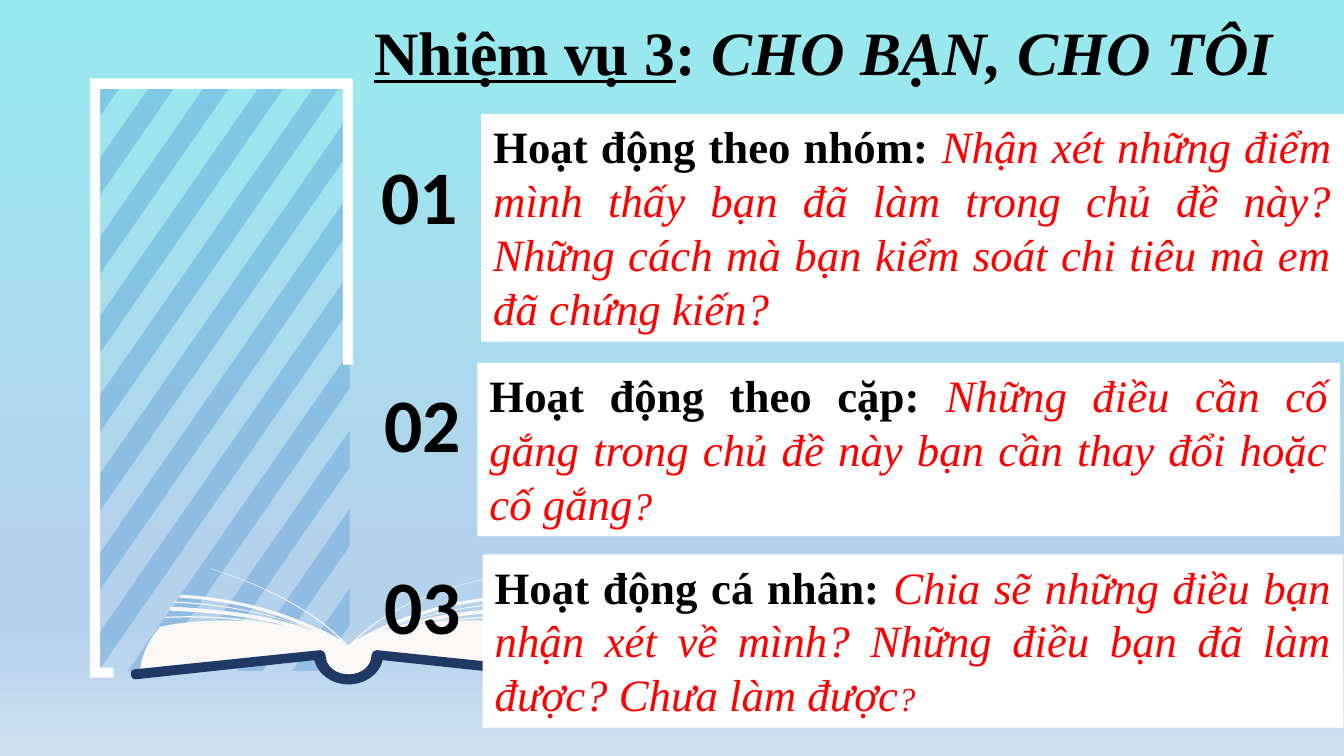
"""Build the classroom task slide with three numbered activities beside an open book."""
from dataclasses import dataclass
from math import atan2, cos, radians, sin

from lxml import etree
from pptx import Presentation
from pptx import util as u
from pptx.dml.color import RGBColor
from pptx.enum import shapes, text
from pptx.oxml.ns import qn


@dataclass(frozen=True)
class Theme:
    white: str = "FFFFFF"
    ink: str = "000000"
    question: str = "FF0000"
    stripe: str = "438CCF"
    paper: str = "F9F8F7"
    cover: str = "203864"
    sky: tuple = ((0, "96EAEE"), (74, "B5D2EC"), (83, "B5D2EC"), (100, "CEE1F2"))
    body_font: str = "Times New Roman"
    number_font: str = "Calibri"
    title_size: int = 44
    number_size: int = 54
    body_size: int = 32


THEME = Theme()
SPINE_X = 249
FRAME = [(64.2, 56), (252, 56), (252, 260.5), (245, 260.5), (245, 63.5),
         (71.5, 63.5), (71.5, 476.8), (81, 476.8), (81, 484), (64.2, 484)]
PAGES = [(249, 463), (220.8, 447.7, 187.8, 443.2, 160.4, 443.2),
         (141.1, 443.2, 124.6, 445.4, 114.5, 447.8), (114.5, 447.8, 100.8, 461.5, 100, 481),
         (229.7, 466.6), (229.7, 475.9, 238.3, 483.5, 249, 483.5)]
COVER = [(249, 488.9), (237.2, 488.9, 226.9, 481.7, 224.6, 471.6), (96.5, 485.3),
         (95, 485.3, 93.6, 483.8, 93.6, 482.4), (93.6, 480.2),
         (93.6, 478.8, 95, 478.1, 96.5, 478.1), (229, 464.4),
         (231.1, 464.4, 232.6, 466.6, 232.6, 468), (232.6, 475.9, 239.8, 481.7, 249, 481.7)]
ACTIVITIES = [
    ("01", (258.3, 103, 82.8), (343.7, 81.4, 616.3, 162.7), "Hoạt động theo nhóm: ",
     "Nhận xét những điểm mình thấy bạn đã làm trong chủ đề này? "
     "Những cách mà bạn kiểm soát chi tiêu mà em đã chứng kiến?", "", 32),
    ("02", (260.8, 265.7, 82.8), (341, 259.2, 616.3, 123.8), "Hoạt động theo cặp: ",
     "Những điều cần cố gắng trong chủ đề này bạn cần thay đổi hoặc cố gắng", "?", 28),
    ("03", (259.6, 396, 85), (344.7, 396, 614.9, 123.8), "Hoạt động cá nhân: ",
     "Chia sẽ những điều bạn nhận xét về mình? "
     "Những điều bạn đã làm được? Chưa làm được", "?", 24),
]


def mirror(commands):
    """Reflect line and curve commands across the spine of the book."""
    return [tuple(value if index % 2 else 2 * SPINE_X - value
                  for index, value in enumerate(command)) for command in commands]


def symmetric(left):
    """Join a left half outline to its reflection, drawn backwards."""
    right = mirror(left)
    back = [after[2:4] + after[:2] + before[-2:] if len(after) == 6 else before[-2:]
            for before, after in zip(right, right[1:])]
    return left + back[::-1]


def leaf_edges(tip_x, tip_y):
    """Return the outline of the loose leaves on the left, with the given top tip."""
    return [
        (249.8, 463), (249.1, 462.2), (249.8, 461.5), (249.8, 461.5, 249.1, 460.8, 247.7, 460.1),
        (212.4, 422.6, tip_x + 1.4, tip_y + 0.7, tip_x + 0.7, tip_y), (tip_x, tip_y),
        (tip_x + 0.7, tip_y + 0.7, 210.2, 422.6, 244.8, 458.6),
        (240.5, 455, 231.1, 450, 218.2, 445), (199.4, 437, 172.8, 427.7, 129.6, 424.8),
        (128.9, 424.8, 128.2, 425.5, 128.2, 426.2), (128.2, 427, 128.9, 427, 129.6, 427),
        (172.1, 429.8, 198.7, 439.2, 217.4, 447.1), (222.5, 449.3),
        (175, 430.6, 125.3, 429.8, 124.6, 429.8), (124.6, 430.6),
        (125.3, 430.6, 177.1, 431.3, 225.4, 450.7), (219.6, 449.3),
        (200.9, 442.1, 169.2, 435.6, 122.4, 433.4), (121.7, 433.4, 121, 434.2, 121, 434.9),
        (121, 435.6, 121.7, 436.3, 122.4, 436.3), (168.5, 437.8, 200.2, 445, 218.2, 451.4),
        (219.6, 451.4), (172.8, 437, 118.8, 440.6, 118.1, 440.6), (118.1, 441.4),
        (118.8, 441.4, 177.8, 437.8, 226.1, 454.3), (241.2, 460.1, 247.7, 465.1, 247.7, 465.1)]


def stripe_outlines():
    """Clip evenly spaced diagonal bands to the panel inside the frame."""
    left, top, right, bottom = 67.7, 59.8, 249.1, 478.8
    slope, first, pitch, thickness = 1.44, 81.4, 56.4, 26.3
    for upper in (first + pitch * index for index in range(-5, 8)):
        points = [(x, y) for x in (left, right) for y in (top, bottom)
                  if upper <= y + slope * (x - right) <= upper + thickness]
        for edge in (upper, upper + thickness):
            crossings = [(x, edge - slope * (x - right)) for x in (left, right)]
            crossings += [(right + (edge - y) / slope, y) for y in (top, bottom)]
            points += [(x, y) for x, y in crossings if left <= x <= right and top <= y <= bottom]
        middle_x, middle_y = (sum(values) / len(points) for values in zip(*points))
        yield sorted(points, key=lambda p: atan2(p[1] - middle_y, p[0] - middle_x))


def paint(shape, color):
    """Give a shape a plain fill without line or shadow."""
    shape.shadow.inherit = False
    shape.fill.solid()
    shape.fill.fore_color.rgb = RGBColor.from_string(color)
    shape.line.fill.background()


def add_outline(slide, outlines, color):
    """Draw closed outlines of lines and cubic curves as one filled freeform."""
    contours = [[tuple(map(u.Pt, command)) for command in outline] for outline in outlines]
    builder = slide.shapes.build_freeform(*contours[0][0], scale=1.0)
    for index, contour in enumerate(contours):
        if index:
            builder.move_to(*contour[0])
        builder.add_line_segments([command[-2:] for command in contour[1:]], close=True)
    shape = builder.convert_to_shape()
    paint(shape, color)
    curves = [command for contour in contours for command in contour[1:] if len(command) == 6]
    segments = list(shape.element.iter(qn("a:lnTo")))
    commands = [command for contour in contours for command in contour[1:]]
    for segment, command in zip(segments, commands if curves else []):
        if len(command) == 6:
            segment.tag = qn("a:cubicBezTo")
            for position, (x, y) in enumerate((command[:2], command[2:4])):
                point = etree.Element(qn("a:pt"), x=str(x - shape.left), y=str(y - shape.top))
                segment.insert(position, point)
    return shape


def add_run(paragraph, words, size, color=THEME.ink, font=THEME.body_font, **style):
    """Append one formatted run to a paragraph."""
    run = paragraph.add_run()
    run.text = words
    run.font.size, run.font.name = u.Pt(size), font
    run.font.color.rgb = RGBColor.from_string(color)
    for name, value in style.items():
        setattr(run.font, name, value)


def prepare_text(shape, alignment, anchor=text.MSO_ANCHOR.TOP, inset=8.64):
    """Set up the text frame of a shape and return its first paragraph."""
    frame = shape.text_frame
    frame.word_wrap = True
    frame.auto_size = text.MSO_AUTO_SIZE.SHAPE_TO_FIT_TEXT
    frame.vertical_anchor = anchor
    frame.margin_left = frame.margin_right = u.Pt(inset)
    frame.margin_top = frame.margin_bottom = u.Pt(3.6)
    frame.paragraphs[0].alignment = alignment
    return frame.paragraphs[0]


def add_background(slide):
    """Fill the slide with the vertical sky gradient."""
    slide.background.fill.gradient()
    slide.background.fill.gradient_angle = 270
    stops = next(slide.element.iter(qn("a:gsLst")))
    for stop in list(stops):
        stops.remove(stop)
    for position, color in THEME.sky:
        stop = etree.SubElement(stops, qn("a:gs"), pos=str(position * 1000))
        etree.SubElement(stop, qn("a:srgbClr"), val=color)


def add_stripes(slide, angle=34.7):
    """Draw the translucent stripes upright and turn them into place."""
    c, s = cos(radians(angle)), sin(radians(angle))
    upright = [[(x * c + y * s, y * c - x * s) for x, y in band] for band in stripe_outlines()]
    shape = add_outline(slide, upright, THEME.stripe)
    shape.rotation, shape.left, shape.top = angle, u.Pt(-35.3), u.Pt(49)
    etree.SubElement(next(shape.element.iter(qn("a:srgbClr"))), qn("a:alpha"), val="32000")


def add_title(slide):
    """Write the task title."""
    box = slide.shapes.add_textbox(u.Pt(228.2), u.Pt(5.8), u.Pt(720.7), u.Pt(60.5))
    paragraph = prepare_text(box, text.PP_ALIGN.CENTER, text.MSO_ANCHOR.MIDDLE, 7.2)
    add_run(paragraph, "Nhiệm vụ 3", THEME.title_size, bold=True, underline=True)
    add_run(paragraph, ": ", THEME.title_size, bold=True)
    add_run(paragraph, "CHO BẠN, CHO TÔI", THEME.title_size, bold=True, italic=True)


def add_activity(slide, number, number_place, card_place, heading, question, mark, mark_size):
    """Add a white activity card and its number."""
    card = slide.shapes.add_shape(shapes.MSO_SHAPE.RECTANGLE, *map(u.Pt, card_place))
    paint(card, THEME.white)
    paragraph = prepare_text(card, text.PP_ALIGN.JUSTIFY)
    add_run(paragraph, heading, THEME.body_size, bold=True)
    add_run(paragraph, question, THEME.body_size, THEME.question, italic=True)
    if mark:
        add_run(paragraph, mark, mark_size, THEME.question, italic=True)
    box = slide.shapes.add_textbox(*map(u.Pt, number_place), u.Pt(72.7))
    paragraph = prepare_text(box, text.PP_ALIGN.CENTER)
    add_run(paragraph, number, THEME.number_size, font=THEME.number_font, bold=True)


def main():
    """Assemble and save the slide."""
    presentation = Presentation()
    presentation.slide_width, presentation.slide_height = u.Pt(960), u.Pt(540)
    slide = presentation.slides.add_slide(presentation.slide_layouts[6])
    add_background(slide)
    add_stripes(slide)
    add_outline(slide, [FRAME], THEME.white)
    add_title(slide)
    for outline, color in ((symmetric(PAGES), THEME.paper), (symmetric(COVER), THEME.cover),
                           (mirror(leaf_edges(146.6, 412.6)), THEME.paper),
                           (leaf_edges(149.8, 406.1), THEME.paper)):
        add_outline(slide, [outline], color)
    for activity in ACTIVITIES:
        add_activity(slide, *activity)
    presentation.save("out.pptx")


if __name__ == "__main__":
    main()
